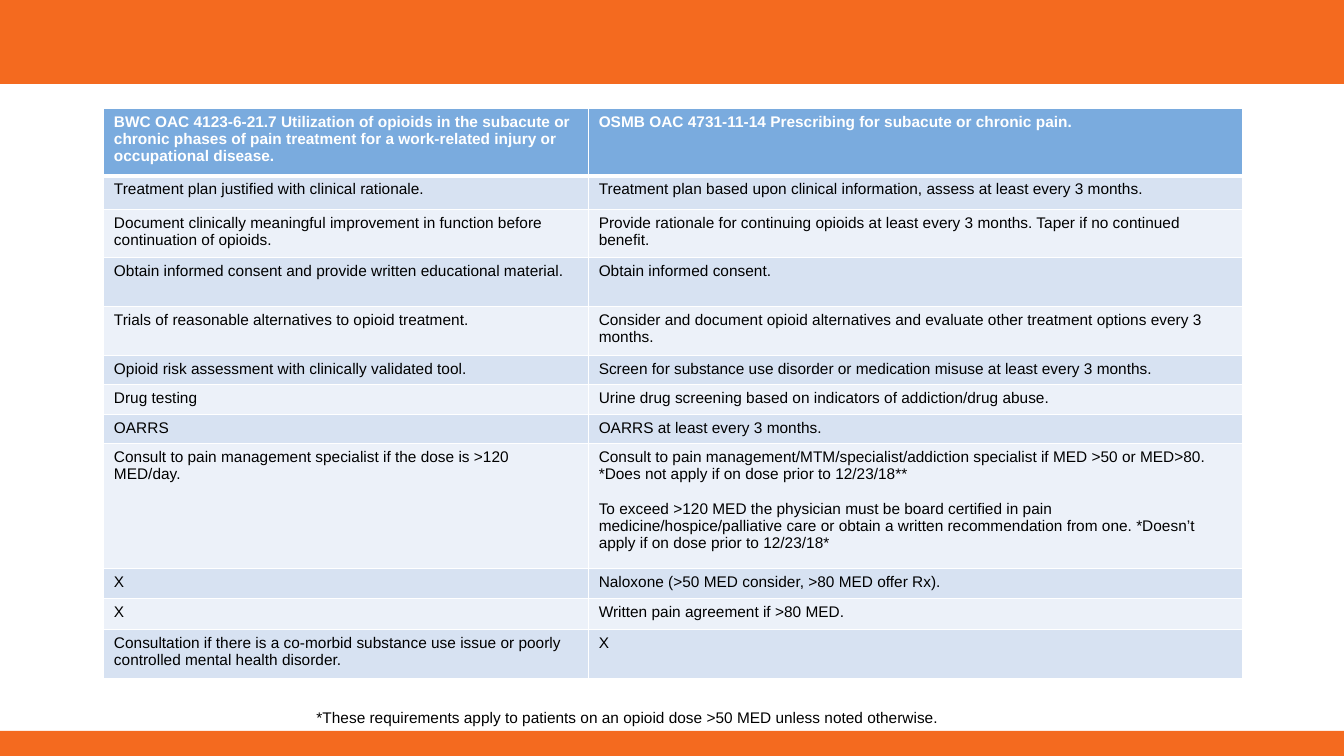
from dataclasses import dataclass

from lxml.etree import SubElement
from pptx import Presentation
from pptx.dml.color import RGBColor
from pptx.enum.shapes import MSO_SHAPE as Shape
from pptx.oxml.ns import qn
from pptx.slide import Slide
from pptx.table import _Cell as Cell
from pptx.text.text import TextFrame
from pptx.util import Pt


@dataclass(frozen=True)
class Theme:
    orange: str = "F46A1F"
    header: str = "7AABDE"
    band_dark: str = "D7E2F2"
    band_light: str = "ECF1F9"
    white: str = "FFFFFF"
    black: str = "000000"
    font: str = "Arial"
    size: float = 11
    paragraph_gap: float = 12.5
    rule: float = 1
    header_rule: float = 3


@dataclass(frozen=True)
class Bar:
    top: float
    height: float


@dataclass(frozen=True)
class Row:
    height: float
    bwc: str
    osmb: str


THEME = Theme()
WIDTH, HEIGHT = 960, 540
BARS = [Bar(0, 60), Bar(522, 18)]
COLUMNS = [346.3, 467.3]
ROWS = [
    Row(48.2, "BWC OAC 4123-6-21.7 Utilization of opioids in the subacute or chronic phases "
        "of pain treatment for a work-related injury or occupational disease.",
        "OSMB OAC 4731-11-14 Prescribing for subacute or chronic pain."),
    Row(23.8, "Treatment plan justified with clinical rationale.",
        "Treatment plan based upon clinical information, assess at least every 3 months."),
    Row(34.8, "Document clinically meaningful improvement in function before continuation of opioids.",
        "Provide rationale for continuing opioids at least every 3 months. "
        "Taper if no continued benefit."),
    Row(34.8, "Obtain informed consent and provide written educational material.",
        "Obtain informed consent."),
    Row(34.8, "Trials of reasonable alternatives to opioid treatment.",
        "Consider and document opioid alternatives and evaluate other treatment options "
        "every 3 months."),
    Row(21.1, "Opioid risk assessment with clinically validated tool.",
        "Screen for substance use disorder or medication misuse at least every 3 months."),
    Row(21.1, "Drug testing", "Urine drug screening based on indicators of addiction/drug abuse."),
    Row(21.1, "OARRS", "OARRS at least every 3 months."),
    Row(89.3, "Consult to pain management specialist if the dose is >120 MED/day.",
        "Consult to pain management/MTM/specialist/addiction specialist if MED >50 or MED>80. "
        "*Does not apply if on dose prior to 12/23/18**\n"
        "To exceed >120 MED the physician must be board certified in pain "
        "medicine/hospice/palliative care or obtain a written recommendation from one. "
        "*Doesn’t apply if on dose prior to 12/23/18*"),
    Row(21.1, "X", "Naloxone (>50 MED consider, >80 MED offer Rx)."),
    Row(22.3, "X", "Written pain agreement if >80 MED."),
    Row(35.3, "Consultation if there is a co-morbid substance use issue or poorly controlled "
        "mental health disorder.", "X"),
]
FOOTNOTE = "*These requirements apply to patients on an opioid dose >50 MED unless noted otherwise."


def write(tf: TextFrame, text: str, color: str, bold: bool = False) -> None:
    tf.word_wrap = True
    for i, line in enumerate(text.split("\n")):
        p = tf.add_paragraph() if i else tf.paragraphs[0]
        if i:
            p.space_before = Pt(THEME.paragraph_gap)
        r = p.add_run()
        r.text = line
        r.font.name = THEME.font
        r.font.size = Pt(THEME.size)
        r.font.bold = bold
        r.font.color.rgb = RGBColor.from_string(color)


def add_bar(s: Slide, bar: Bar) -> None:
    sp = s.shapes.add_shape(Shape.RECTANGLE, 0, Pt(bar.top), Pt(WIDTH), Pt(bar.height))
    sp.shadow.inherit = False
    sp.fill.solid()
    sp.fill.fore_color.rgb = RGBColor.from_string(THEME.orange)
    sp.line.fill.background()


def set_borders(cell: Cell, top: float, bottom: float) -> None:
    tc_pr = cell._tc.get_or_add_tcPr()
    widths = {"a:lnL": THEME.rule, "a:lnR": THEME.rule, "a:lnT": top, "a:lnB": bottom}
    for tag, width in widths.items():
        ln = SubElement(tc_pr, qn(tag), w=str(Pt(width)))
        SubElement(SubElement(ln, qn("a:solidFill")), qn("a:srgbClr"), val=THEME.white)


def add_comparison(s: Slide) -> None:
    total = sum(row.height for row in ROWS)
    table = s.shapes.add_table(len(ROWS), len(COLUMNS), Pt(74.2), Pt(77.4),
                               Pt(sum(COLUMNS)), Pt(total)).table
    table.horz_banding = False
    for column, width in zip(table.columns, COLUMNS):
        column.width = Pt(width)
    for i, row in enumerate(ROWS):
        table.rows[i].height = Pt(row.height)
        is_header = i == 0
        band = THEME.band_dark if i % 2 else THEME.band_light
        top = THEME.header_rule if i == 1 else THEME.rule
        bottom = THEME.header_rule if is_header else THEME.rule
        for j, text in enumerate((row.bwc, row.osmb)):
            cell = table.cell(i, j)
            set_borders(cell, top, bottom)
            cell.fill.solid()
            cell.fill.fore_color.rgb = RGBColor.from_string(THEME.header if is_header else band)
            write(cell.text_frame, text, THEME.white if is_header else THEME.black, is_header)


def main() -> None:
    prs = Presentation()
    prs.slide_width, prs.slide_height = Pt(WIDTH), Pt(HEIGHT)
    s = prs.slides.add_slide(prs.slide_layouts[6])
    for bar in BARS:
        add_bar(s, bar)
    add_comparison(s)
    footnote = s.shapes.add_textbox(Pt(219), Pt(502), Pt(522.7), Pt(20.6))
    write(footnote.text_frame, FOOTNOTE, THEME.black)
    prs.save("out.pptx")


if __name__ == "__main__":
    main()
